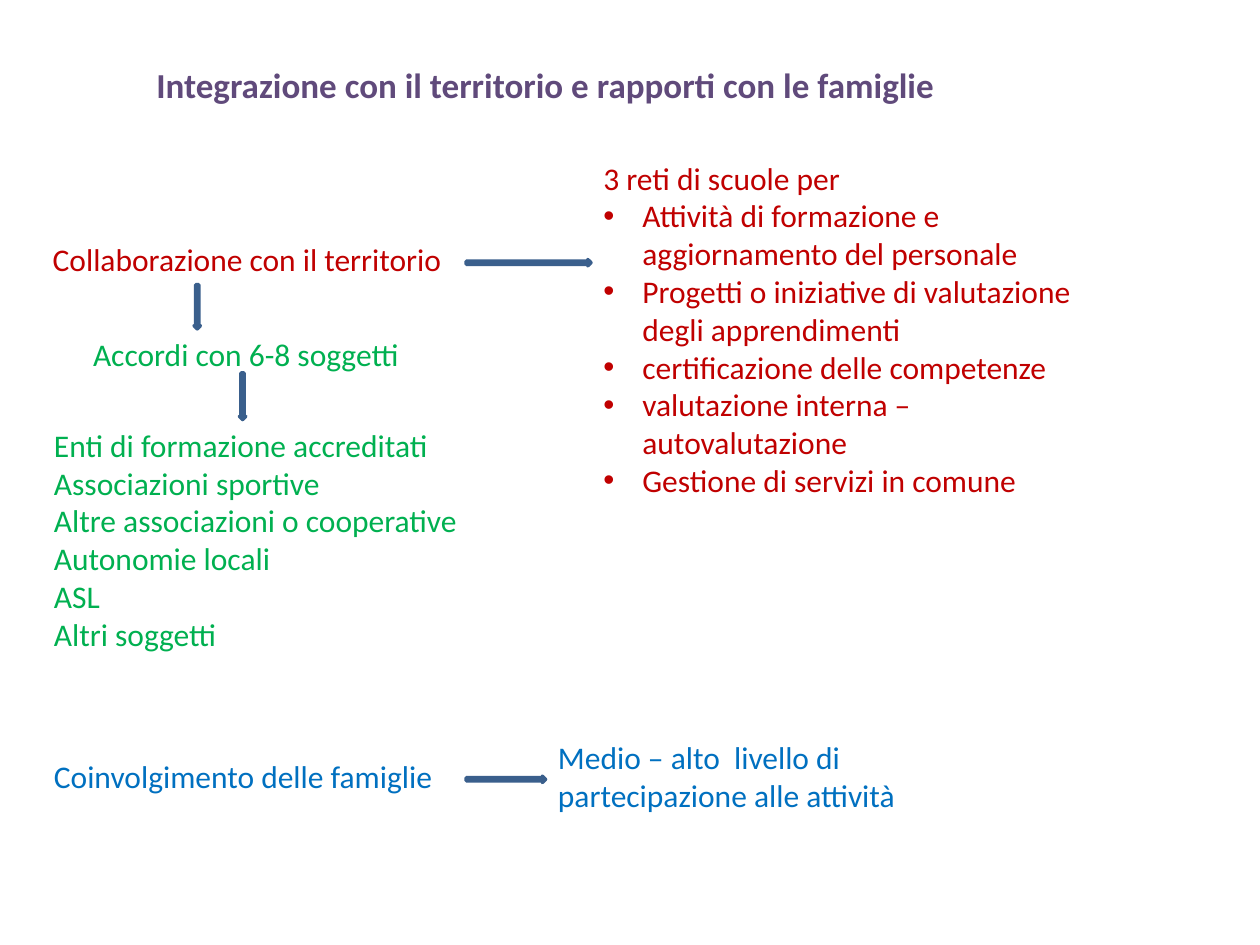
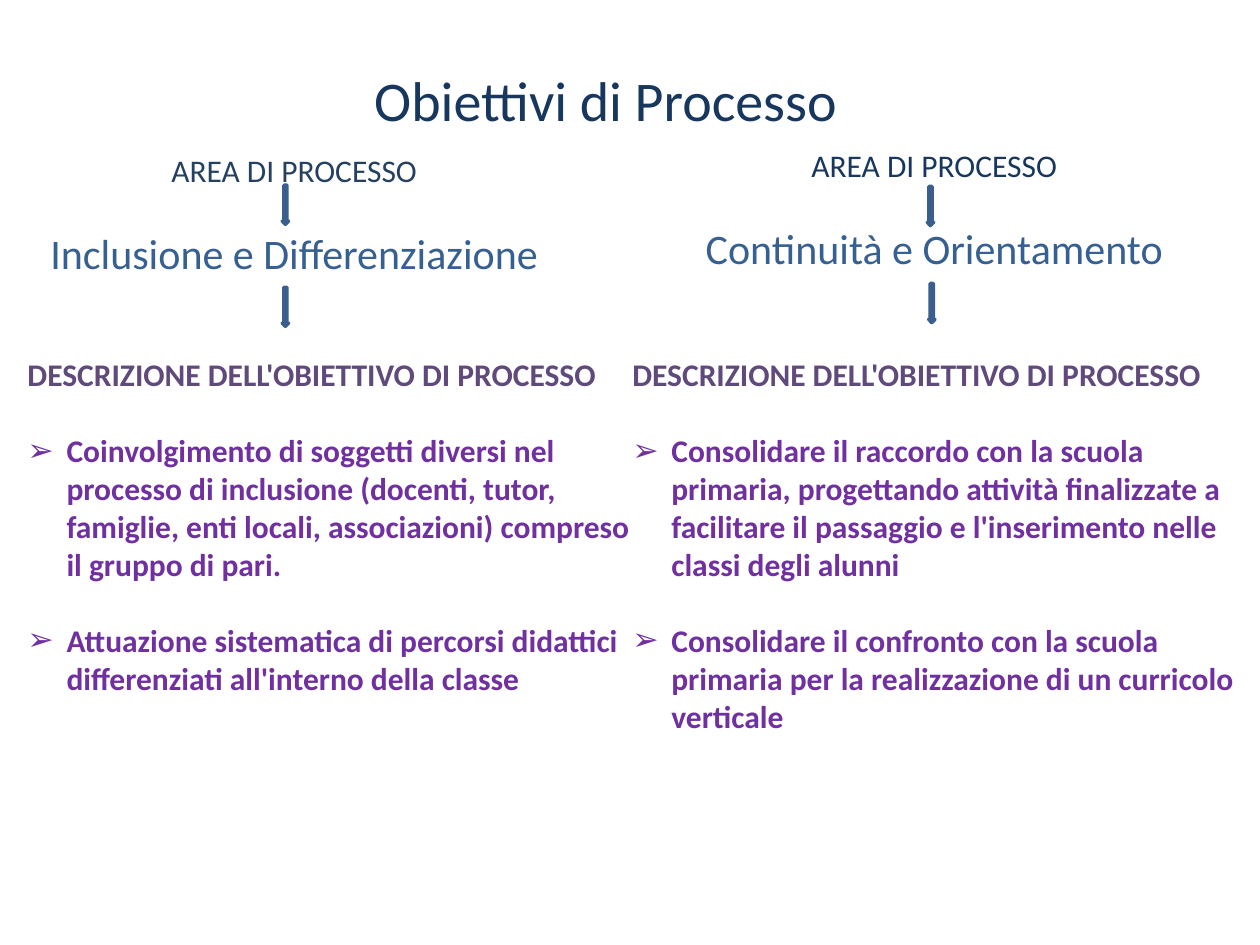
from dataclasses import dataclass

from lxml import etree
from pptx import Presentation
from pptx import util as u
from pptx.dml import color
from pptx.enum import shapes, text
from pptx.oxml import ns

COLORS = {
    "white": "FFFFFF",
    "plum": "604A7B",
    "red": "C00000",
    "blue": "0070C0",
    "green": "00B050",
    "navy": "17375E",
    "slate": "254061",
    "steel": "376092",
    "purple": "7030A0",
    "arrow": "4F81BD",
    "arrow_edge": "3A5F8C",
}
FONT = "Calibri"
INDENT = 0.31
ARROW_WIDTH = 0.05
LINE_GAP = 22  # height in points of one 18-point line
FRAME_FORMAT = {
    "word_wrap": True,
    "auto_size": text.MSO_AUTO_SIZE.NONE,
    "vertical_anchor": text.MSO_ANCHOR.TOP,
    "margin_left": u.Inches(0.1),
    "margin_right": u.Inches(0.1),
    "margin_top": u.Inches(0.05),
    "margin_bottom": u.Inches(0.05),
}


@dataclass(frozen=True)
class Line:
    words: str
    color: str
    size: float = 18
    bold: bool = False
    bullet: str = ""
    gap: float = 0
    centered: bool = False


@dataclass(frozen=True)
class TextBlock:
    left: float
    top: float
    width: float
    height: float
    lines: tuple[Line, ...]


@dataclass(frozen=True)
class Arrow:
    left: float
    top: float
    length: float
    down: bool = True


@dataclass(frozen=True)
class ProcessArea:
    area: TextBlock
    goals: TextBlock
    arrows: tuple[Arrow, ...]


def rgb(name: str) -> color.RGBColor:
    return color.RGBColor.from_string(COLORS[name])


def set_values(target, values: dict) -> None:
    for name, value in values.items():
        setattr(target, name, value)


# Text
def add_bullet(paragraph, character: str) -> None:
    properties = paragraph._p.get_or_add_pPr()
    properties.set("marL", str(u.Inches(INDENT)))
    properties.set("indent", str(-u.Inches(INDENT)))
    etree.SubElement(properties, ns.qn("a:buFont")).set("typeface", "Arial")
    etree.SubElement(properties, ns.qn("a:buChar")).set("char", character)


def fill_text(shape, block: TextBlock) -> None:
    set_values(shape, {name: u.Inches(getattr(block, name))
                       for name in ("left", "top", "width", "height")})
    frame = shape.text_frame
    set_values(frame, FRAME_FORMAT)
    for index, line in enumerate(block.lines):
        paragraph = frame.add_paragraph() if index else frame.paragraphs[0]
        set_values(paragraph, {
            "alignment": text.PP_ALIGN.CENTER if line.centered else text.PP_ALIGN.LEFT,
            "space_before": u.Pt(line.gap),
        })
        run = paragraph.add_run()
        run.text = line.words
        set_values(run.font, {"name": FONT, "size": u.Pt(line.size), "bold": line.bold})
        run.font.color.rgb = rgb(line.color)
        if line.bullet:
            add_bullet(paragraph, line.bullet)


def add_text(slide, block: TextBlock) -> None:
    fill_text(slide.shapes.add_textbox(0, 0, 0, 0), block)


def add_titled_slide(presentation, title: TextBlock):
    slide = presentation.slides.add_slide(presentation.slide_layouts[5])
    slide.background.fill.solid()
    slide.background.fill.fore_color.rgb = rgb("white")
    fill_text(slide.shapes.title, title)
    return slide


# Arrows
def add_arrow(slide, arrow: Arrow) -> None:
    if arrow.down:
        preset, size = shapes.MSO_SHAPE.DOWN_ARROW, (ARROW_WIDTH, arrow.length)
    else:
        preset, size = shapes.MSO_SHAPE.RIGHT_ARROW, (arrow.length, ARROW_WIDTH)
    shape = slide.shapes.add_shape(
        preset, *(u.Inches(value) for value in (arrow.left, arrow.top, *size)))
    shape.shadow.inherit = False
    shape.fill.solid()
    shape.fill.fore_color.rgb = rgb("arrow")
    shape.line.color.rgb = rgb("arrow_edge")
    shape.line.width = u.Pt(2)


# Slide 1: local area and families
TERRITORY_TITLE = TextBlock(1.14, 0.45, 7.09, 0.44, (
    Line("Integrazione con il territorio e rapporti con le famiglie", "plum", 20, True),))

NETWORK_ACTIVITIES = (
    "Attività di formazione e aggiornamento del personale",
    "Progetti o iniziative di valutazione degli apprendimenti",
    "certificazione delle competenze",
    "valutazione interna – autovalutazione",
    "Gestione di servizi in comune",
)
PARTNERS = (
    "Enti di formazione accreditati",
    "Associazioni sportive",
    "Altre associazioni o cooperative",
    "Autonomie locali",
    "ASL",
    "Altri soggetti",
)
TERRITORY_BLOCKS = (
    TextBlock(0.32, 1.86, 3.38, 0.4, (Line("Collaborazione con il territorio", "red"),)),
    TextBlock(0.33, 5.96, 3.3, 0.4, (Line("Coinvolgimento delle famiglie", "blue"),)),
    TextBlock(4.69, 1.21, 4.08, 4.04, (
        Line("3 reti di scuole per", "red"),
        *(Line(activity, "red", bullet="•") for activity in NETWORK_ACTIVITIES))),
    TextBlock(0.64, 2.61, 2.66, 0.71, (Line("Accordi con 6-8 soggetti", "green"),)),
    TextBlock(4.33, 5.81, 3.19, 0.71, (
        Line("Medio – alto  livello di partecipazione alle attività", "blue"),)),
    TextBlock(0.33, 3.33, 5, 1.92, tuple(Line(partner, "green") for partner in PARTNERS)),
)
TERRITORY_ARROWS = (
    Arrow(3.7, 2.06, 0.99, down=False),
    Arrow(1.54, 2.26, 0.35),
    Arrow(1.9, 2.96, 0.37),
    Arrow(3.7, 6.16, 0.63, down=False),
)

# Slide 2: process goals
GOALS_TITLE = TextBlock(2.87, 0.47, 5.87, 0.64, (Line("Obiettivi di Processo", "navy", 32),))


def area_lines(name: str, label_color: str) -> tuple[Line, ...]:
    return (Line("AREA DI PROCESSO", label_color, centered=True),
            Line(name, "steel", 24, gap=LINE_GAP, centered=True))


def goal_lines(*goals: str) -> tuple[Line, ...]:
    return (Line("DESCRIZIONE DELL'OBIETTIVO DI PROCESSO", "plum", bold=True),
            *(Line(goal, "purple", bold=True, bullet="➢", gap=LINE_GAP) for goal in goals))


PROCESS_AREAS = (
    ProcessArea(
        TextBlock(0.28, 1.15, 4.11, 1.72, area_lines("Inclusione e Differenziazione", "slate")),
        TextBlock(0.12, 2.77, 5, 2.83, goal_lines(
            "Coinvolgimento di soggetti diversi nel processo di inclusione (docenti, tutor, "
            "famiglie, enti locali, associazioni) compreso il gruppo di pari.",
            "Attuazione sistematica di percorsi didattici differenziati "
            "all'interno della classe")),
        (Arrow(2.24, 1.47, 0.31), Arrow(2.24, 2.28, 0.31))),
    ProcessArea(
        TextBlock(5.46, 1.11, 3.91, 1.75, area_lines("Continuità e Orientamento", "navy")),
        TextBlock(4.92, 2.77, 5.08, 3.13, goal_lines(
            "Consolidare il raccordo con la scuola primaria, progettando attività "
            "finalizzate a facilitare il passaggio e l'inserimento nelle classi degli alunni",
            "Consolidare il confronto con la scuola primaria per la realizzazione "
            "di un curricolo verticale")),
        (Arrow(7.36, 1.48, 0.31), Arrow(7.37, 2.25, 0.31))),
)


def main() -> None:
    presentation = Presentation()
    set_values(presentation, {"slide_width": u.Inches(10), "slide_height": u.Inches(7.5)})

    territory_slide = add_titled_slide(presentation, TERRITORY_TITLE)
    for block in TERRITORY_BLOCKS:
        add_text(territory_slide, block)
    for arrow in TERRITORY_ARROWS:
        add_arrow(territory_slide, arrow)

    goals_slide = add_titled_slide(presentation, GOALS_TITLE)
    for process in PROCESS_AREAS:
        add_text(goals_slide, process.area)
        add_text(goals_slide, process.goals)
        for arrow in process.arrows:
            add_arrow(goals_slide, arrow)

    presentation.save("out.pptx")


if __name__ == "__main__":
    main()
